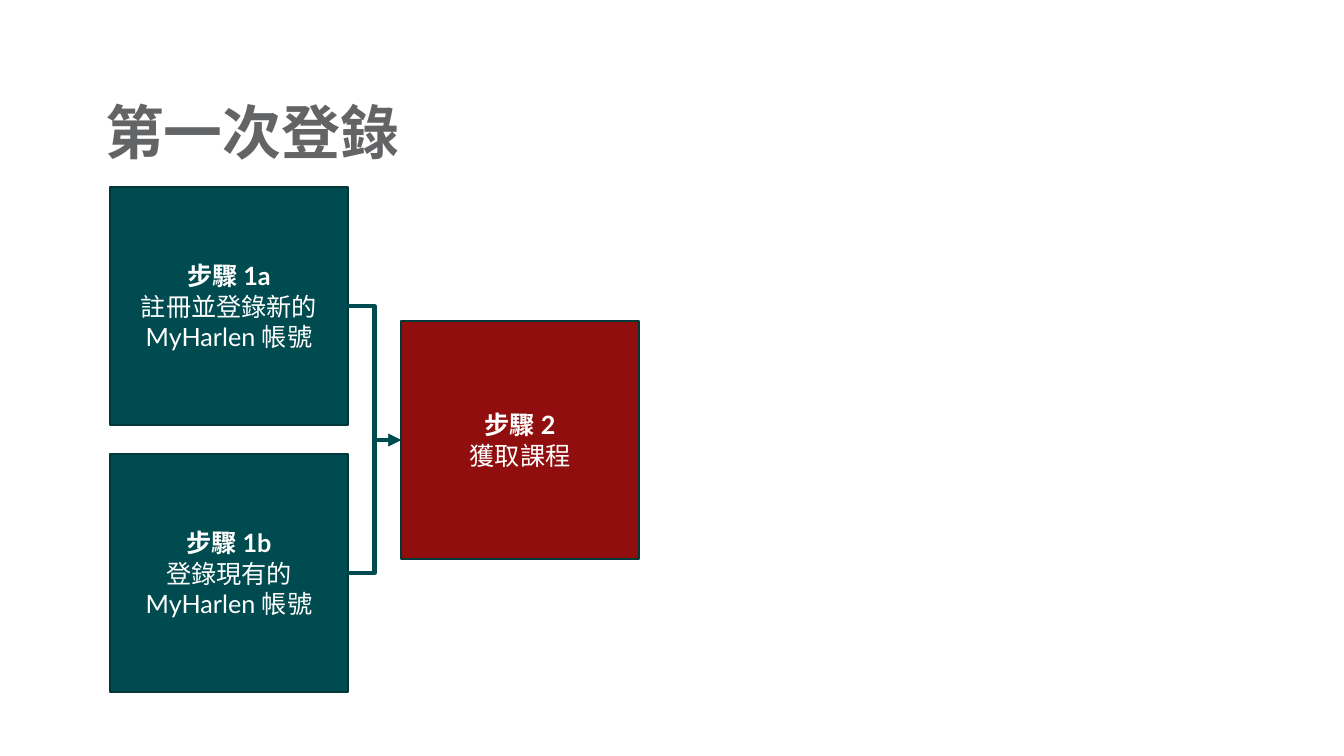
import pptx
import pptx.util
import pptx.dml.color
import pptx.enum.text
import pptx.enum.shapes
import pptx.oxml.ns
from lxml import etree

RGB = pptx.dml.color.RGBColor
TEAL = RGB(0x00, 0x4B, 0x4F)
EDGE = RGB(0x00, 0x37, 0x3A)
RED = RGB(0x90, 0x0F, 0x0E)
GRAY = RGB(0x63, 0x64, 0x66)
WHITE = RGB(0xFF, 0xFF, 0xFF)
SIDE = 238
MIDDLE = pptx.enum.text.MSO_ANCHOR.MIDDLE


def px(n):
    return pptx.util.Emu(round(n * 914400 / 100.8))


def add_run(para, text, size, color, bold):
    run = para.add_run()
    run.text = text
    run.font.name = "Lato"
    run.font.size = pptx.util.Pt(size)
    run.font.color.rgb = color
    run.font.bold = bold


deck = pptx.Presentation()
deck.slide_width, deck.slide_height = px(1344), px(756)
slide = deck.slides.add_slide(deck.slide_layouts[6])
shapes = slide.shapes

title = shapes.add_textbox(px(105), px(100), px(974), px(70)).text_frame
title.word_wrap = True
title.margin_left = 0
title.vertical_anchor = MIDDLE
title.paragraphs[0].line_spacing = 0.9
add_run(title.paragraphs[0], "第一次登錄", 42, GRAY, True)

steps = [
    (110, 187, TEAL, "步驟 1a", "註冊並登錄新的 MyHarlen 帳號"),
    (401, 321, RED, "步驟 2", "獲取課程"),
    (110, 454, TEAL, "步驟 1b", "登錄現有的 MyHarlen 帳號"),
]
boxes = []
for left, top, fill, head, body in steps:
    box = shapes.add_shape(pptx.enum.shapes.MSO_SHAPE.RECTANGLE,
                           px(left), px(top), px(SIDE), px(SIDE))
    box.shadow.inherit = False
    box.fill.solid()
    box.fill.fore_color.rgb = fill
    box.line.color.rgb = EDGE
    box.line.width = pptx.util.Pt(1)
    frame = box.text_frame
    frame.word_wrap = True
    frame.vertical_anchor = MIDDLE
    for para, text, bold in ((frame.paragraphs[0], head, True),
                             (frame.add_paragraph(), body, False)):
        para.alignment = pptx.enum.text.PP_ALIGN.CENTER
        add_run(para, text, 18, WHITE, bold)
    boxes.append(box)

first, goal, other = boxes
for start in (other, first):
    link = shapes.add_connector(pptx.enum.shapes.MSO_CONNECTOR.ELBOW, 0, 0, 0, 0)
    link.begin_connect(start, 3)
    link.end_connect(goal, 1)
    link.line.color.rgb = TEAL
    link.line.width = pptx.util.Pt(3)
    tail = etree.SubElement(link.line._get_or_add_ln(), pptx.oxml.ns.qn("a:tailEnd"))
    tail.set("type", "triangle")
    etree.SubElement(link._element.spPr, pptx.oxml.ns.qn("a:effectLst"))

deck.save("out.pptx")
